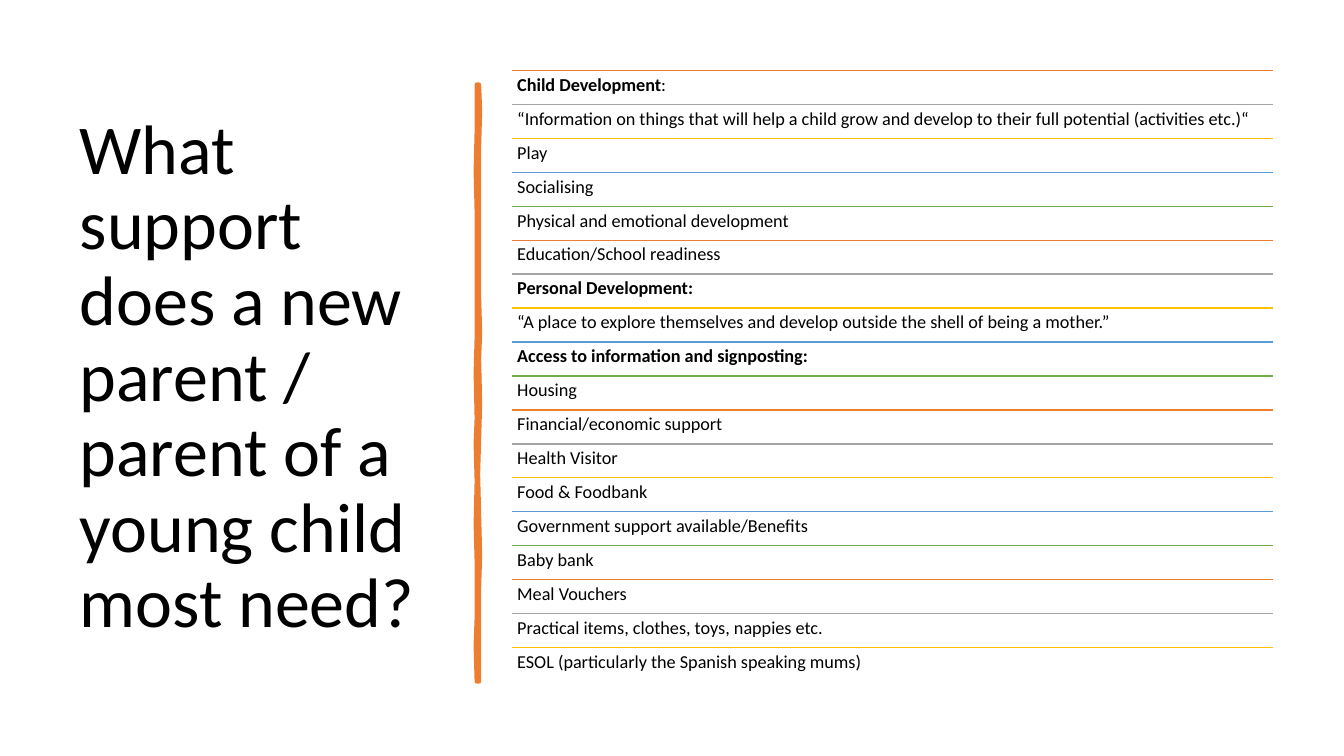
from dataclasses import dataclass
from itertools import cycle

from lxml.etree import SubElement
from pptx import Presentation
from pptx.dml.color import RGBColor as RGB
from pptx.enum.shapes import MSO_CONNECTOR as Connector
from pptx.enum.text import MSO_ANCHOR as Anchor, MSO_AUTO_SIZE as AutoSize, PP_ALIGN as Align
from pptx.oxml.ns import qn
from pptx.util import Inches, Pt


@dataclass(frozen=True)
class Theme:
    font: str = "Calibri"
    ink: str = "000000"
    accent: str = "ED7D31"
    rules: tuple = ("ED7D31", "A5A5A5", "FFC000", "5B9BD5", "70AD47")
    title_size: float = 50
    row_size: float = 13
    rule_width: float = 1
    brush_width: float = 3.25
    line_spacing: float = 0.9


class SlideBuilder:
    def __init__(self, slide, theme):
        self.slide = slide
        self.theme = theme

    def style_run(self, run, size, bold=False):
        run.font.name = self.theme.font
        run.font.size = Pt(size)
        run.font.bold = bold
        run.font.color.rgb = RGB.from_string(self.theme.ink)

    def title(self, wording, left, top, width, height):
        heading = self.slide.shapes.title
        heading.left, heading.top = Inches(left), Inches(top)
        heading.width, heading.height = Inches(width), Inches(height)
        frame = heading.text_frame
        frame.text = wording
        frame.word_wrap = True
        frame.auto_size = AutoSize.NONE
        frame.vertical_anchor = Anchor.MIDDLE
        paragraph = frame.paragraphs[0]
        paragraph.alignment = Align.LEFT
        paragraph.line_spacing = self.theme.line_spacing
        self.style_run(paragraph.runs[0], self.theme.title_size)

    def brush_stroke(self, outline):
        start, *others = [(Inches(x), Inches(y)) for x, y in outline]
        builder = self.slide.shapes.build_freeform(*start)
        builder.add_line_segments(others, close=True)
        stroke = builder.convert_to_shape()
        stroke.shadow.inherit = False
        stroke.fill.solid()
        stroke.fill.fore_color.rgb = RGB.from_string(self.theme.accent)
        stroke.line.color.rgb = RGB.from_string(self.theme.accent)
        stroke.line.width = Pt(self.theme.brush_width)
        SubElement(stroke.line._get_or_add_ln(), qn("a:round"))

    def rule(self, shapes, left, top, width, colour):
        rule = shapes.add_connector(
            Connector.STRAIGHT, Inches(left), Inches(top), Inches(left + width), Inches(top))
        rule.line.color.rgb = RGB.from_string(colour)
        rule.line.width = Pt(self.theme.rule_width)
        SubElement(rule._element.spPr, qn("a:effectLst"))

    def row_text(self, shapes, heading, body, left, top, width, height):
        frame = shapes.add_textbox(
            Inches(left), Inches(top), Inches(width), Inches(height)).text_frame
        frame.word_wrap = True
        frame.auto_size = AutoSize.NONE
        frame.margin_left = frame.margin_right = Inches(0.05)
        frame.margin_top = frame.margin_bottom = Inches(0.05)
        paragraph = frame.paragraphs[0]
        paragraph.line_spacing = self.theme.line_spacing
        for wording, bold in ((heading, True), (body, False)):
            if wording:
                run = paragraph.add_run()
                run.text = wording
                self.style_run(run, self.theme.row_size, bold)

    def ruled_list(self, rows, left, top, width, height):
        shapes = self.slide.shapes.add_group_shape().shapes
        pitch = height / len(rows)
        for index, ((heading, body), colour) in enumerate(zip(rows, cycle(self.theme.rules))):
            row_top = top + index * pitch
            self.rule(shapes, left, row_top, width, colour)
            self.row_text(shapes, heading, body, left, row_top, width, pitch)


NEEDS = [
    ("Child Development", ":"),
    ("", "“Information on things that will help a child grow and develop "
         "to their full potential (activities etc.)“"),
    ("", "Play"),
    ("", "Socialising"),
    ("", "Physical and emotional development"),
    ("", "Education/School readiness"),
    ("Personal Development:", ""),
    ("", "“A place to explore themselves and develop outside the shell of being a mother.”"),
    ("Access to information and signposting:", ""),
    ("", "Housing"),
    ("", "Financial/economic support"),
    ("", "Health Visitor"),
    ("", "Food & Foodbank"),
    ("", "Government support available/Benefits"),
    ("", "Baby bank"),
    ("", "Meal Vouchers"),
    ("", "Practical items, clothes, toys, nappies etc."),
    ("", "ESOL (particularly the Spanish speaking mums)"),
]

BRUSH_OUTLINE = [
    (4.75, 0.84), (4.76, 1.1), (4.75, 1.46), (4.75, 2.26), (4.75, 2.94),
    (4.76, 3.3), (4.75, 3.56), (4.76, 4), (4.75, 4.36), (4.74, 4.7),
    (4.75, 5.1), (4.76, 5.5), (4.75, 5.84), (4.75, 6.76),
    (4.73, 6.76), (4.72, 6.4), (4.73, 6.13), (4.73, 5.57), (4.72, 5.2),
    (4.73, 4.77), (4.72, 4.4), (4.73, 4.15), (4.72, 3.7), (4.73, 3.35),
    (4.73, 2.5), (4.73, 2.1), (4.72, 1.7), (4.73, 1.3), (4.73, 0.84),
]


def main():
    deck = Presentation()
    deck.slide_width, deck.slide_height = Inches(13.33), Inches(7.5)
    page = SlideBuilder(deck.slides.add_slide(deck.slide_layouts[5]), Theme())
    page.title("What support does a new parent / parent of a young child most need?",
               0.69, 0.7, 3.74, 6.11)
    page.brush_stroke(BRUSH_OUTLINE)
    page.ruled_list(NEEDS, 5.08, 0.7, 7.55, 6.06)
    deck.save("out.pptx")


if __name__ == "__main__":
    main()
